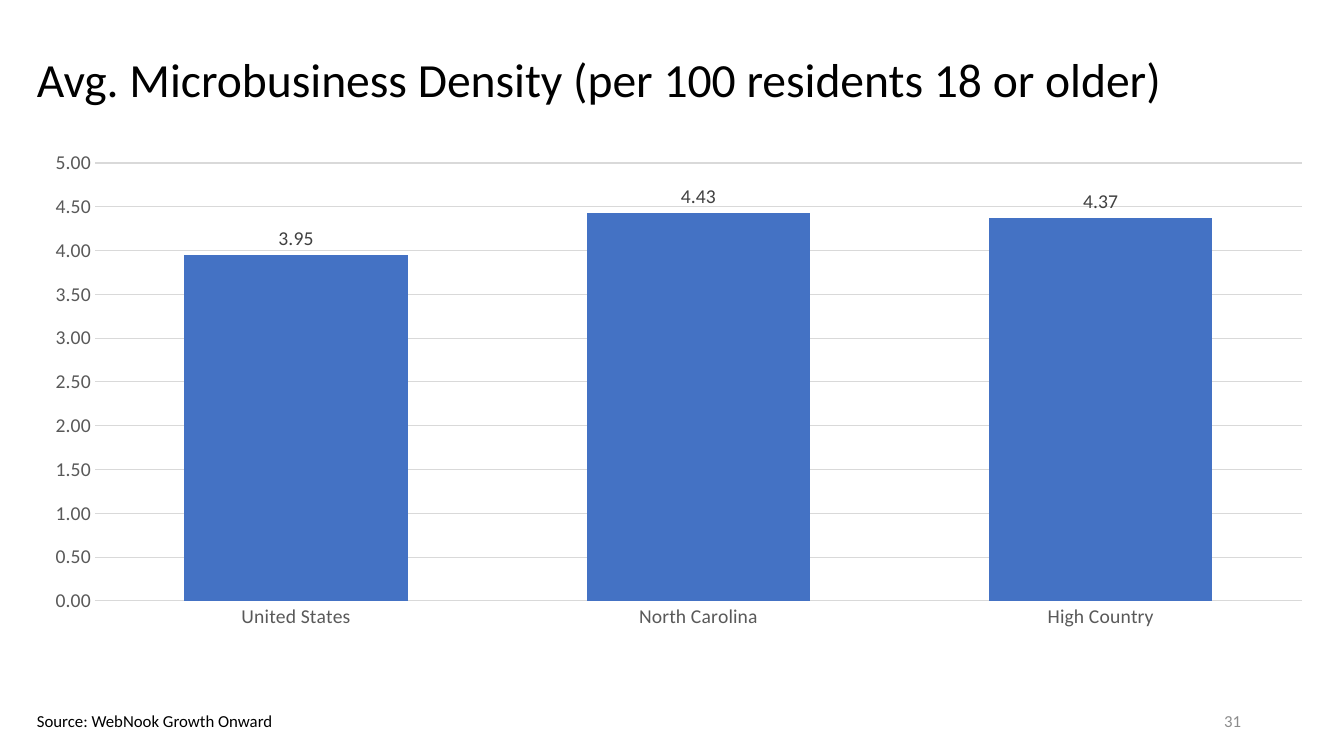
from lxml import etree
from pptx import Presentation
from pptx import util as u
from pptx.chart.data import CategoryChartData
from pptx.dml.color import RGBColor
from pptx.enum import chart as ch, text as tx

SIZE = (1344, 756)
FONT = "Calibri"
# text, box in px, size in pt, colour, alignment, anchor, wrap, line spacing
TEXTS = [
    ("Avg. Microbusiness Density (per 100 residents 18 or older)",
     (27, 20, 1286, 125), 34, "000000", "LEFT", "MIDDLE", True, 0.9),
    ("31", (949, 701, 302, 40), 12, "8C8C8C", "RIGHT", "MIDDLE", True, 1.0),
    ("Source: WebNook Growth Onward",
     (27, 706, 267, 30), 12, "000000", "LEFT", "TOP", False, 1.0),
]
DENSITY = {"United States": 3.95, "North Carolina": 4.43, "High Country": 4.37}
CHART = (27, 144, 1290, 544)
PLOT = (68, 19, 1207, 438)  # px within the chart
BAR, GRID, AXIS, LABEL = "4472C4", "D9D9D9", "595959", "404040"


def px(n):
    return u.Emu(round(n * 914400 / 100.8))


def rgb(code):
    return RGBColor.from_string(code)


def style(font, size, color):
    font.name, font.size = FONT, u.Pt(size)
    font.color.rgb = rgb(color)


def rule(line):
    line.color.rgb = rgb(GRID)
    line.width = u.Pt(0.75)


def write(slide, words, box, size, color, align, anchor, wrap, lead):
    frame = slide.shapes.add_textbox(*map(px, box)).text_frame
    frame.word_wrap = wrap
    frame.vertical_anchor = tx.MSO_ANCHOR[anchor]
    para = frame.paragraphs[0]
    para.text = words
    para.alignment = tx.PP_ALIGN[align]
    para.line_spacing = lead
    style(para.font, size, color)


def place(chart):
    """Fix the inner plot area at the box in PLOT."""
    area = chart._chartSpace.chart.plotArea
    for old in area.findall("{*}layout"):
        area.remove(old)
    ns = "{" + etree.QName(area).namespace + "}"
    layout = etree.Element(ns + "layout")
    manual = etree.SubElement(layout, ns + "manualLayout")
    parts = {"layoutTarget": "inner", "xMode": "edge", "yMode": "edge"}
    for tag, part, whole in zip("xywh", PLOT, CHART[2:] * 2):
        parts[tag] = part / whole
    for tag, val in parts.items():
        etree.SubElement(manual, ns + tag).set("val", str(val))
    area.insert(0, layout)


def draw(slide):
    data = CategoryChartData(number_format="0.00")
    data.categories = list(DENSITY)
    data.add_series("Series 1", list(DENSITY.values()))
    kind = ch.XL_CHART_TYPE.COLUMN_CLUSTERED
    chart = slide.shapes.add_chart(kind, *map(px, CHART), data).chart
    chart.has_legend = chart.has_title = False
    style(chart.font, 14, "000000")
    place(chart)

    cat, val = chart.category_axis, chart.value_axis
    for axis in (cat, val):
        axis.major_tick_mark = axis.minor_tick_mark = ch.XL_TICK_MARK.NONE
        style(axis.tick_labels.font, 14, AXIS)
    rule(cat.format.line)
    val.format.line.fill.background()
    val.minimum_scale, val.maximum_scale, val.major_unit = 0, 5, 0.5
    val.tick_labels.number_format = "0.00"
    val.tick_labels.number_format_is_linked = False
    rule(val.major_gridlines.format.line)

    plot = chart.plots[0]
    plot.gap_width = 80
    plot.vary_by_categories = False
    bars = plot.series[0]
    bars.format.fill.solid()
    bars.format.fill.fore_color.rgb = rgb(BAR)
    tags = bars.data_labels
    tags.show_value = True
    tags.position = ch.XL_LABEL_POSITION.OUTSIDE_END
    tags.number_format, tags.number_format_is_linked = "0.00", False
    style(tags.font, 14, LABEL)


def main():
    deck = Presentation()
    deck.slide_width, deck.slide_height = map(px, SIZE)
    slide = deck.slides.add_slide(deck.slide_layouts[6])
    for item in TEXTS:
        write(slide, *item)
    draw(slide)
    deck.save("out.pptx")


if __name__ == "__main__":
    main()
